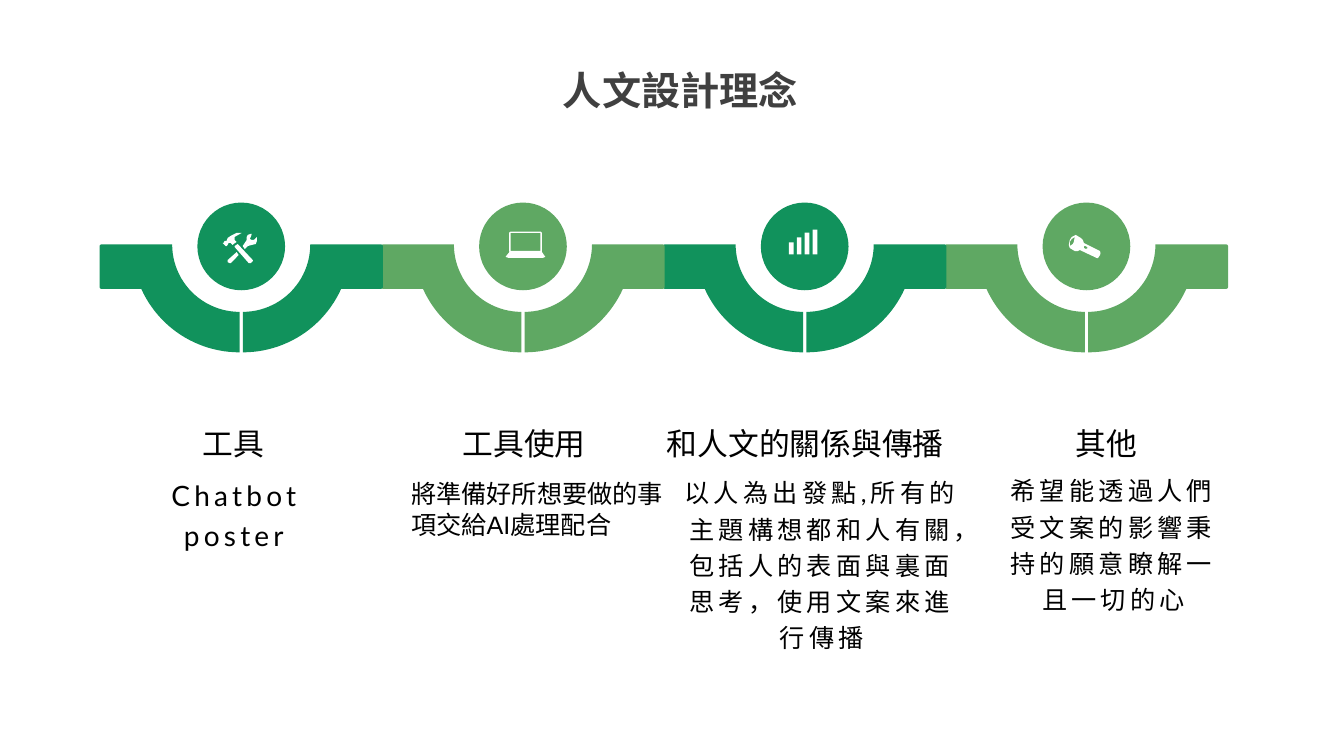
from dataclasses import dataclass
from math import asin, cos, pi, sin

from pptx import Presentation
from pptx.dml.color import RGBColor
from pptx.enum.shapes import MSO_SHAPE
from pptx.enum.text import MSO_AUTO_SIZE, PP_ALIGN
from pptx.shapes.autoshape import Shape
from pptx.slide import Slide
from pptx.util import Cm, Pt

Point = tuple[float, float]
Contour = list[Point]


@dataclass(frozen=True)
class Theme:
    dark_green: str = "11925C"
    light_green: str = "5FA863"
    white: str = "FFFFFF"
    black: str = "000000"
    title_grey: str = "404040"
    sans: str = "Arial"
    body_font: str = "Lato"
    title_size: int = 28
    heading_size: int = 22
    large_body_size: int = 20
    body_size: int = 18


@dataclass(frozen=True)
class TextBlock:
    text: str
    left: float
    top: float
    width: float
    height: float
    size: int
    font: str
    color: str = "000000"
    bold: bool = False
    centered: bool = True
    line_spacing: float = 1.0
    tracking: int = 0


@dataclass(frozen=True)
class Icon:
    left: float
    top: float
    contours: list[Contour]


@dataclass(frozen=True)
class Stage:
    color: str
    heading: TextBlock
    body: TextBlock
    icon: Icon | None


THEME = Theme()
FIRST_CENTER, STAGE_PITCH = 6.08, 7.10
BAND_TOP, BAND_HEIGHT, BAND_REACH = 6.16, 1.12, 3.57
INNER_RADIUS, OUTER_RADIUS = 1.70, 2.72
HALF_GAP, CORNER_RADIUS = 0.04, 0.05
DISC_DIAMETER, DISC_CENTER = 2.21, 6.21
ICON_UNIT = 0.0254
BAR_LEFT, BAR_PITCH, BAR_WIDTH, BAR_BASE = -0.40, 0.20, 0.12, 6.41
BAR_HEIGHTS = (0.30, 0.43, 0.55, 0.62)

TOOLS = Icon(-0.47, -0.34, [
    [(5, 27), (5, 29), (7, 30), (8, 30), (16, 22), (14, 19)],
    [(34, 4), (32, 6), (31, 7), (29, 7), (27, 6), (28, 4), (29, 1), (28, 1),
     (25, 2), (24, 4), (24, 7), (22, 10), (20, 13), (22, 16), (25, 13),
     (29, 12), (33, 11), (34, 8)],
    [(15, 11), (12, 13), (12, 14), (26, 30), (28, 30), (30, 28), (30, 27)],
    [(6, 10), (8, 10), (10, 12), (11, 11), (14, 9), (12, 7), (12, 4), (19, 0),
     (14, 0), (8, 3), (5, 5), (4, 8), (2, 8), (1, 10), (0, 10), (3, 13),
     (4, 13), (5, 12)],
])
LAPTOP = Icon(-0.44, -0.37, [
    [(0, 25), (3, 26), (37, 26), (39.5, 25), (36, 20), (36, 1), (35, 0),
     (5, 0), (3.5, 1), (3.5, 19), (4, 20)],
    [(34.5, 19), (5, 19), (5, 1.3), (34.5, 1.3)],
])
FLASHLIGHT = Icon(-0.42, -0.34, [
    [(0, 7), (2, 4), (6, 2), (11, 5), (13, 7), (14, 10), (30, 18), (30.5, 20),
     (30, 22), (28, 25), (27, 25), (10, 17), (8, 18), (5, 18), (0, 15), (-1, 12)],
    [(4, 9), (5, 4), (2, 6), (0, 9), (0, 13), (3, 11)],
    [(18, 15), (16, 13), (14, 13), (14, 15), (16, 16)],
])


def heading(text: str, left: float, width: float = 4.32) -> TextBlock:
    return TextBlock(text, left, 10.59, width, 1.19, THEME.heading_size, THEME.sans)


def spaced_body(text: str, left: float, top: float, width: float, height: float,
                size: int = THEME.body_size) -> TextBlock:
    return TextBlock(text, left, top, width, height, size, THEME.body_font,
                     line_spacing=1.2, tracking=300)


TITLE = TextBlock("人文設計理念", 10.01, 1.55, 14.27, 1.45, THEME.title_size,
                  THEME.sans, THEME.title_grey, bold=True)
STAGES = [
    Stage(THEME.dark_green, heading("工具", 3.73),
          spaced_body("Chatbot\nposter", 3.15, 11.76, 5.49, 2.26, THEME.large_body_size),
          TOOLS),
    Stage(THEME.light_green, heading("工具使用", 11.05),
          TextBlock("將準備好所想要做的事項交給AI處理配合", 10.11, 11.94, 6.91, 3.30,
                    THEME.body_size, THEME.sans, centered=False),
          LAPTOP),
    Stage(THEME.dark_green, heading("和人文的關係與傳播", 16.41, 7.77),
          spaced_body("以人為出發點,所有的主題構想都和人有關，包括人的表面與裏面思考，使用文案來進行傳播",
                      16.99, 11.76, 7.44, 4.88),
          None),
    Stage(THEME.light_green, heading("其他", 25.73),
          spaced_body("希望能透過人們受文案的影響秉持的願意瞭解一且一切的心",
                      25.15, 11.71, 5.82, 3.96),
          FLASHLIGHT),
]


def paint(shape: Shape, color: str) -> None:
    shape.shadow.inherit = False
    shape.fill.solid()
    shape.fill.fore_color.rgb = RGBColor.from_string(color)
    shape.line.fill.background()


def arc(x: float, y: float, radius: float, start: float, end: float, steps: int) -> Contour:
    angles = [start + (end - start) * step / steps for step in range(steps + 1)]
    return [(x + radius * cos(angle), y + radius * sin(angle)) for angle in angles]


def draw_outline(page: Slide, contours: list[Contour], color: str) -> None:
    scaled = [[(Cm(x), Cm(y)) for x, y in contour] for contour in contours]
    builder = page.shapes.build_freeform(*scaled[0][0], scale=1.0)
    builder.add_line_segments(scaled[0][1:], close=True)
    for contour in scaled[1:]:
        builder.move_to(*contour[0])
        builder.add_line_segments(contour[1:], close=True)
    paint(builder.convert_to_shape(), color)


def draw_half_ring(page: Slide, center: float, side: int, color: str) -> None:
    corner_x = BAND_REACH - HALF_GAP - CORNER_RADIUS
    half = [
        *arc(0, 0, INNER_RADIUS, pi / 2, 0, 24),
        *arc(corner_x, CORNER_RADIUS, CORNER_RADIUS, -pi / 2, 0, 4),
        *arc(corner_x, BAND_HEIGHT - CORNER_RADIUS, CORNER_RADIUS, 0, pi / 2, 4),
        *arc(0, 0, OUTER_RADIUS, asin(BAND_HEIGHT / OUTER_RADIUS), pi / 2, 24),
    ]
    outline = [(center + side * (HALF_GAP + x), BAND_TOP + y) for x, y in half]
    draw_outline(page, [outline], color)


def draw_icon(page: Slide, icon: Icon, center: float) -> None:
    left, top = center + icon.left, DISC_CENTER + icon.top
    contours = [[(left + x * ICON_UNIT, top + y * ICON_UNIT) for x, y in contour]
                for contour in icon.contours]
    draw_outline(page, contours, THEME.white)


def draw_bars(page: Slide, center: float) -> None:
    for index, height in enumerate(BAR_HEIGHTS):
        left = center + BAR_LEFT + index * BAR_PITCH
        bar = page.shapes.add_shape(MSO_SHAPE.RECTANGLE, Cm(left), Cm(BAR_BASE - height),
                                    Cm(BAR_WIDTH), Cm(height))
        paint(bar, THEME.white)


def draw_disc(page: Slide, stage: Stage, center: float) -> None:
    radius = DISC_DIAMETER / 2
    disc = page.shapes.add_shape(MSO_SHAPE.OVAL, Cm(center - radius), Cm(DISC_CENTER - radius),
                                 Cm(DISC_DIAMETER), Cm(DISC_DIAMETER))
    paint(disc, stage.color)
    if stage.icon:
        draw_icon(page, stage.icon, center)
    else:
        draw_bars(page, center)


def draw_text(page: Slide, block: TextBlock) -> None:
    box = page.shapes.add_textbox(Cm(block.left), Cm(block.top), Cm(block.width), Cm(block.height))
    frame = box.text_frame
    frame.word_wrap = True
    frame.auto_size = MSO_AUTO_SIZE.SHAPE_TO_FIT_TEXT
    frame.text = block.text
    for para in frame.paragraphs:
        para.alignment = PP_ALIGN.CENTER if block.centered else PP_ALIGN.LEFT
        para.line_spacing = block.line_spacing
        for span in para.runs:
            span.font.name = block.font
            span.font.size = Pt(block.size)
            span.font.bold = block.bold
            span.font.color.rgb = RGBColor.from_string(block.color)
            if block.tracking:
                span.font._element.set("spc", str(block.tracking))


def main() -> None:
    deck = Presentation()
    deck.slide_width, deck.slide_height = Cm(33.87), Cm(19.05)
    page = deck.slides.add_slide(deck.slide_layouts[6])
    centers = [FIRST_CENTER + index * STAGE_PITCH for index in range(len(STAGES))]
    placed = list(zip(STAGES, centers))
    for stage, center in reversed(placed):
        for side in (1, -1):
            draw_half_ring(page, center, side, stage.color)
    for stage, center in placed:
        draw_disc(page, stage, center)
        draw_text(page, stage.heading)
        draw_text(page, stage.body)
    draw_text(page, TITLE)
    deck.save("out.pptx")


if __name__ == "__main__":
    main()
